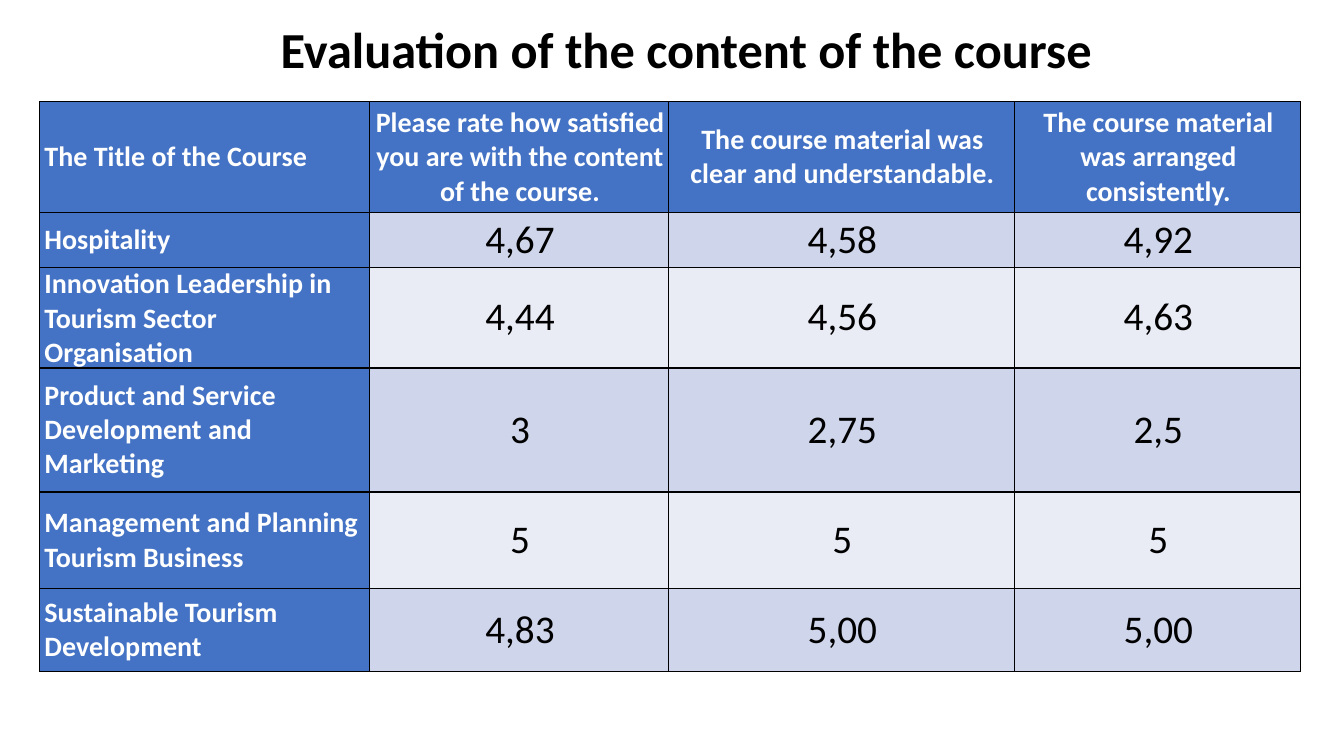
from lxml.etree import SubElement
from pptx import Presentation
from pptx.dml.color import RGBColor
from pptx.enum.text import MSO_ANCHOR, PP_ALIGN
from pptx.oxml.ns import qn
from pptx.util import Inches, Pt

SLIDE_WIDTH, SLIDE_HEIGHT = Inches(13.33), Inches(7.5)
FONT = "Calibri"
COLORS = {
    "black": "000000",
    "white": "FFFFFF",
    "heading": "4472C4",
    "odd_row": "CFD5EA",
    "even_row": "E9EBF5",
}

# Table sizes in percent of the slide's width and height
COLUMN_WIDTHS = [24.57, 22.24, 25.73, 21.3]
ROW_HEIGHTS = [14.67, 7.2, 9.07, 16.4, 12.8, 10.93]
RATINGS = [
    ["The Title of the Course",
     "Please rate how satisfied you are with the content of the course.",
     "The course material was clear and understandable.",
     "The course material was arranged consistently."],
    ["Hospitality", "4,67", "4,58", "4,92"],
    ["Innovation Leadership in Tourism Sector Organisation", "4,44", "4,56", "4,63"],
    ["Product and Service Development and Marketing", "3", "2,75", "2,5"],
    ["Management and Planning Tourism Business", "5", "5", "5"],
    ["Sustainable Tourism Development", "4,83", "5,00", "5,00"],
]


def across(percent):
    return int(SLIDE_WIDTH * percent / 100)


def down(percent):
    return int(SLIDE_HEIGHT * percent / 100)


def write(frame, text, size=20, color="white", bold=True,
          align=PP_ALIGN.CENTER, spacing=1.0):
    para = frame.paragraphs[0]
    para.alignment = align
    para.line_spacing = spacing
    span = para.add_run()
    span.text = text
    span.font.name = FONT
    span.font.size = Pt(size)
    span.font.bold = bold
    span.font.color.rgb = RGBColor.from_string(COLORS[color])


def add_title(page, text):
    box = page.shapes.add_textbox(across(7.95), down(2.8), across(86.27), down(8.13))
    frame = box.text_frame
    frame.word_wrap = True
    frame.vertical_anchor = MSO_ANCHOR.MIDDLE
    write(frame, text, size=36, color="black", spacing=0.9)


def add_borders(cell, color="black", width=1):
    properties = cell._tc.get_or_add_tcPr()
    for side in ("a:lnL", "a:lnR", "a:lnT", "a:lnB"):
        line = SubElement(properties, qn(side), w=str(Pt(width)))
        fill = SubElement(line, qn("a:solidFill"))
        SubElement(fill, qn("a:srgbClr"), val=COLORS[color])


def format_cell(cell, fill):
    cell.vertical_anchor = MSO_ANCHOR.MIDDLE
    # The narrower right margin keeps the longest heading on three lines
    cell.margin_left, cell.margin_right = Inches(0.05), Inches(0.03)
    cell.margin_top = cell.margin_bottom = 0
    add_borders(cell)
    cell.fill.solid()
    cell.fill.fore_color.rgb = RGBColor.from_string(COLORS[fill])


def add_ratings_table(page):
    table = page.shapes.add_table(
        len(ROW_HEIGHTS), len(COLUMN_WIDTHS), across(2.93), down(13.47),
        across(sum(COLUMN_WIDTHS)), down(sum(ROW_HEIGHTS))).table
    table.first_row = table.horz_banding = False
    for column, width in zip(table.columns, COLUMN_WIDTHS):
        column.width = across(width)
    for row, height in zip(table.rows, ROW_HEIGHTS):
        row.height = down(height)

    # Headings run along the top and left; ratings sit on banded rows
    for r, texts in enumerate(RATINGS):
        for c, text in enumerate(texts):
            cell = table.cell(r, c)
            if r == 0 or c == 0:
                format_cell(cell, "heading")
                align = PP_ALIGN.CENTER if c else PP_ALIGN.LEFT
                write(cell.text_frame, text, align=align)
            else:
                format_cell(cell, "odd_row" if r % 2 else "even_row")
                write(cell.text_frame, text, size=28, color="black", bold=False)


def main():
    deck = Presentation()
    deck.slide_width, deck.slide_height = SLIDE_WIDTH, SLIDE_HEIGHT
    page = deck.slides.add_slide(deck.slide_layouts[6])
    add_title(page, "Evaluation of the content of the course")
    add_ratings_table(page)
    deck.save("out.pptx")


if __name__ == "__main__":
    main()
